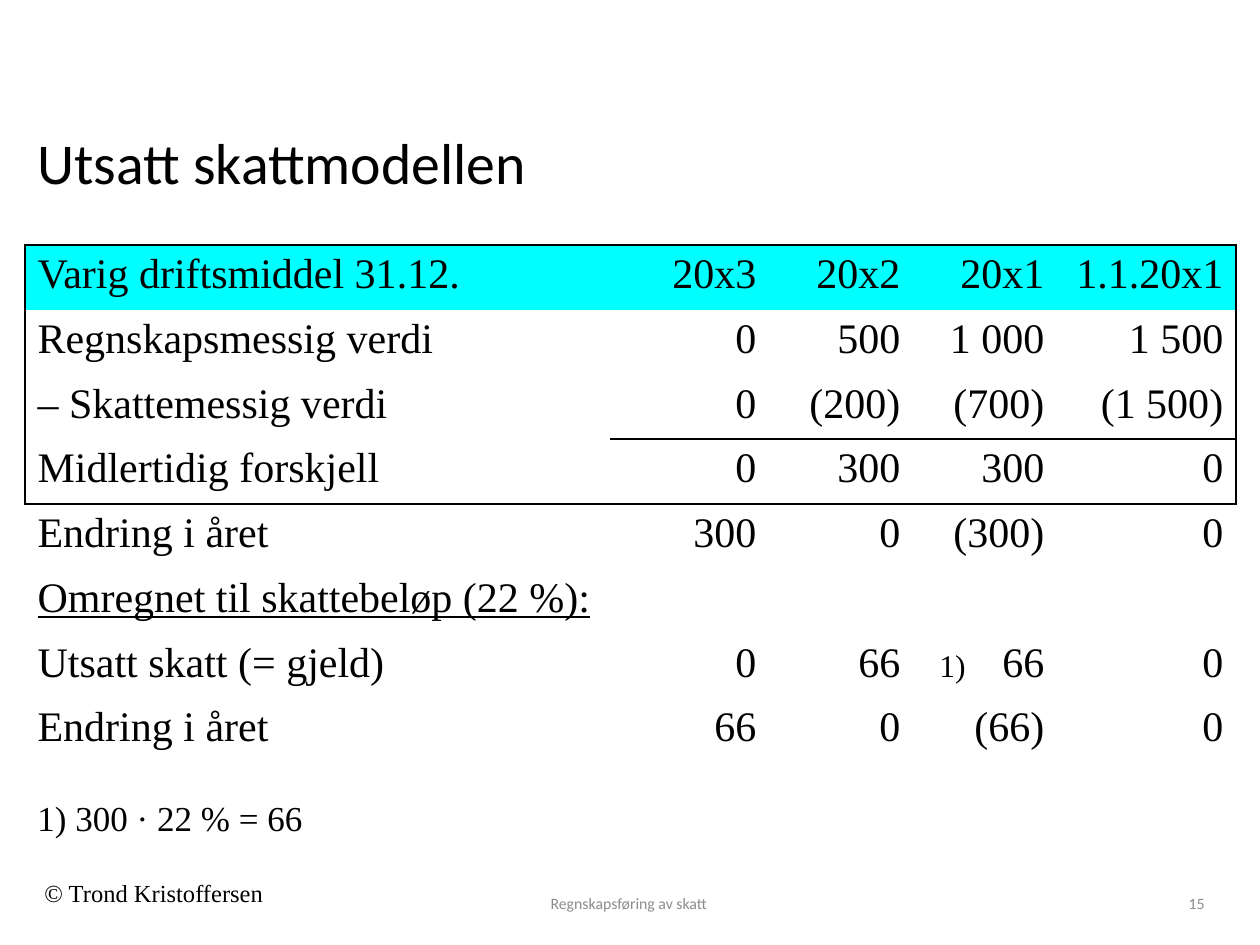
from lxml.etree import SubElement as Sub
from pptx import Presentation
from pptx.dml.color import RGBColor
from pptx.enum.text import MSO_ANCHOR as Anchor, MSO_AUTO_SIZE as Fit, PP_ALIGN as Align
from pptx.oxml.ns import qn
from pptx.util import Pt

PX = 7257
BLACK = RGBColor(0, 0, 0)
GREY = RGBColor(0x8C, 0x8C, 0x8C)
CYAN = RGBColor(0, 0xFF, 0xFF)
SERIF, SANS = "Times New Roman", "Calibri"
COLS = (585, 159, 144, 144, 179)
ROWS = (
    ("Varig driftsmiddel 31.12.", "20x3", "20x2", "20x1", "1.1.20x1"),
    ("Regnskapsmessig verdi", "0", "500", "1 000", "1 500"),
    ("– Skattemessig verdi", "0", "(200)", "(700)", "(1 500)"),
    ("Midlertidig forskjell", "0", "300", "300", "0"),
    ("Endring i året", "300", "0", "(300)", "0"),
    ("Omregnet til skattebeløp (22 %):", "", "", "", ""),
    ("Utsatt skatt (= gjeld)", "0", "66", "66", "0"),
    ("Endring i året", "66", "0", "(66)", "0"),
)
BOX, SUM, HEAD, NOTE = 4, 3, 5, (6, 3)


class Deck:
    """Holds the style and the current slide."""

    def __init__(self):
        self.prs = Presentation()
        self.prs.slide_width, self.prs.slide_height = 1260 * PX, 945 * PX
        self.slide = self.prs.slides.add_slide(self.prs.slide_layouts[5])

    def run(self, para, text, size, font=SERIF, color=BLACK, under=None):
        run = para.add_run()
        run.text = text
        run.font.size, run.font.name = Pt(size), font
        run.font.color.rgb = color
        run.font.underline = under

    def title(self, text, x, y, w, h):
        box = self.slide.shapes.title
        box.left, box.top, box.width, box.height = (v * PX for v in (x, y, w, h))
        frame = box.text_frame
        frame.vertical_anchor = Anchor.MIDDLE
        para = frame.paragraphs[0]
        para.alignment, para.line_spacing = Align.LEFT, 0.9
        self.run(para, text, 33, SANS)

    def text(self, text, x, y, w, h, size, font=SERIF, color=BLACK,
             align=Align.LEFT, anchor=Anchor.TOP, wrap=True):
        box = self.slide.shapes.add_textbox(*(v * PX for v in (x, y, w, h)))
        frame = box.text_frame
        frame.word_wrap, frame.vertical_anchor = wrap, anchor
        frame.auto_size = Fit.SHAPE_TO_FIT_TEXT if anchor == Anchor.TOP else Fit.NONE
        para = frame.paragraphs[0]
        para.alignment = align
        self.run(para, text, size, font, color)

    def edges(self, cell, sides):
        props = cell._tc.get_or_add_tcPr()
        for side in "LRTB":
            line = Sub(props, qn("a:ln" + side), w=str(Pt(1)))
            if side in sides:
                fill = Sub(line, qn("a:solidFill"))
                Sub(fill, qn("a:srgbClr"), val=str(BLACK))
            else:
                Sub(line, qn("a:noFill"))

    def space(self, para, count):
        props = para._p.get_or_add_pPr()
        Sub(Sub(props, qn("a:spcBef")), qn("a:spcPct"), val="20000")
        if count:
            props.set("marL", "457200")
            props.set("indent", "-457200")
            Sub(props, qn("a:buSzPct"), val="75000")
            Sub(props, qn("a:buAutoNum"), type="arabicParenR")

    def table(self, x, y, h):
        high = h * PX // len(ROWS)
        grid = self.slide.shapes.add_table(
            len(ROWS), len(COLS), x * PX, y * PX, sum(COLS) * PX, h * PX).table
        grid.first_row = grid.horz_banding = False
        for col, wide in zip(grid.columns, COLS):
            col.width = wide * PX
        last = len(COLS) - 1
        for r, row in enumerate(ROWS):
            grid.rows[r].height = high
            for c, text in enumerate(row):
                cell = grid.cell(r, c)
                rules = {
                    "L": c == 0 and r < BOX,
                    "R": c == last and r < BOX,
                    "T": r in (0, BOX) or (r == SUM and c > 0),
                    "B": r == BOX - 1 or (r == SUM - 1 and c > 0),
                }
                self.edges(cell, [side for side, on in rules.items() if on])
                if r == 0:
                    cell.fill.solid()
                    cell.fill.fore_color.rgb = CYAN
                else:
                    cell.fill.background()
                if text:
                    para = cell.text_frame.paragraphs[0]
                    para.alignment = Align.RIGHT if c else Align.LEFT
                    self.space(para, (r, c) == NOTE)
                    self.run(para, text, 24, under=True if r == HEAD else None)


def main():
    deck = Deck()
    foot = dict(size=9, font=SANS, color=GREY, anchor=Anchor.MIDDLE)
    deck.text("© Trond Kristoffersen", 32, 872, 262, 42, 14)
    deck.text("Regnskapsføring av skatt ", 431, 872, 399, 63, align=Align.CENTER, **foot)
    deck.text("15", 955, 872, 262, 63, align=Align.RIGHT, **foot)
    deck.title("Utsatt skattmodellen", 25, 116, 1201, 100)
    deck.table(25, 245, 518)
    deck.text("1) 300 · 22 % = 66", 25, 790, 292, 55, 20, wrap=False)
    deck.prs.save("out.pptx")


if __name__ == "__main__":
    main()
